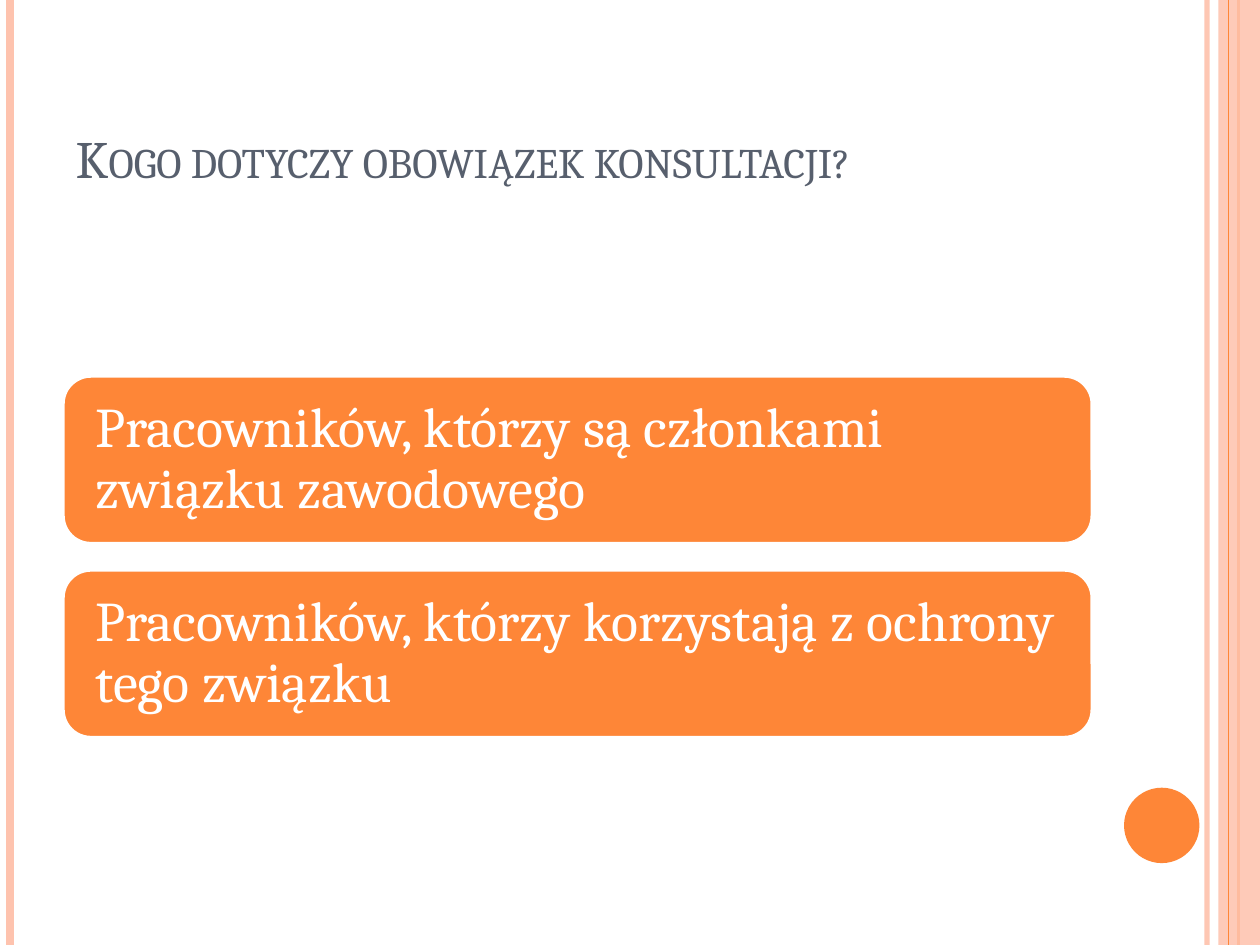
"""Build the slide on which employees the duty of consultation covers."""
from lxml.etree import SubElement
from pptx import Presentation
from pptx.dml.color import RGBColor
from pptx.enum.shapes import MSO_CONNECTOR, MSO_SHAPE
from pptx.enum.text import MSO_ANCHOR, MSO_AUTO_SIZE, PP_ALIGN
from pptx.oxml.ns import qn
from pptx.util import Cm, Pt

TITLE = "Kogo dotyczy obowiązek konsultacji?"
GROUPS = [
    "Pracowników, którzy są członkami związku zawodowego",
    "Pracowników, którzy korzystają z ochrony tego związku",
]
THEME = {
    "font": "Cambria",
    "orange": RGBColor(0xFE, 0x86, 0x37),
    "peach": RGBColor(0xFE, 0xC3, 0xAE),
    "slate": RGBColor(0x57, 0x5F, 0x6D),
    "white": RGBColor(0xFF, 0xFF, 0xFF),
    "title_size": Pt(30),
    "group_size": Pt(32),
}
WIDTH, HEIGHT = 25.4, 19.05
LEFT, CONTENT_WIDTH = 1.27, 20.75
GROUP_TOP, GROUP_HEIGHT, GROUP_GAP = 7.58, 3.38, 0.53
STRIPES_BELOW = [(24.33, "peach", 3, 93), (0.2, "peach", 4.5, 100), (24.97, "orange", 1.5, 100)]
BAND_LEFT, BAND_OPACITY = 24.56, 87
STRIPES_ABOVE = [(24.77, "orange", 0.75, 100)]
DOT = (22.66, 15.88, 1.52, 1.52)


def set_opacity(element, percent):
    color = next(element.iter(qn("a:srgbClr")))
    SubElement(color, qn("a:alpha"), val=str(percent * 1000))


def add_stripe(slide, x, color, weight, opacity):
    stripe = slide.shapes.add_connector(MSO_CONNECTOR.STRAIGHT, Cm(x), Cm(0), Cm(x), Cm(HEIGHT))
    stripe.line.color.rgb = THEME[color]
    stripe.line.width = Pt(weight)
    properties = stripe.line._get_or_add_ln()
    if opacity < 100:
        set_opacity(properties, opacity)
    SubElement(properties.getparent(), qn("a:effectLst"))


def add_filled(slide, kind, place, color):
    filled = slide.shapes.add_shape(kind, *map(Cm, place))
    filled.shadow.inherit = False
    filled.fill.solid()
    filled.fill.fore_color.rgb = THEME[color]
    filled.line.fill.background()
    return filled


def write(frame, text, anchor, size, color):
    formats = {"word_wrap": True, "auto_size": MSO_AUTO_SIZE.NONE, "vertical_anchor": anchor}
    for name, value in formats.items():
        setattr(frame, name, value)
    paragraph = frame.paragraphs[0]
    paragraph.alignment = PP_ALIGN.LEFT
    run = paragraph.add_run()
    run.text = text
    for name, value in {"name": THEME["font"], "size": THEME[size]}.items():
        setattr(run.font, name, value)
    run.font.color.rgb = THEME[color]
    return paragraph


def add_decoration(slide):
    for stripe in STRIPES_BELOW:
        add_stripe(slide, *stripe)
    band_place = (BAND_LEFT, 0, WIDTH - BAND_LEFT, HEIGHT)
    band = add_filled(slide, MSO_SHAPE.RECTANGLE, band_place, "peach")
    set_opacity(band.fill._xPr, BAND_OPACITY)
    for stripe in STRIPES_ABOVE:
        add_stripe(slide, *stripe)
    add_filled(slide, MSO_SHAPE.OVAL, DOT, "orange")


def add_title(slide):
    title = slide.shapes.title
    place = {"left": LEFT, "top": 0.76, "width": CONTENT_WIDTH, "height": 3.18}
    for name, value in place.items():
        setattr(title, name, Cm(value))
    heading = write(title.text_frame, TITLE, MSO_ANCHOR.BOTTOM, "title_size", "slate")
    heading.runs[0].font._element.set("cap", "small")


def add_groups(slide):
    for index, text in enumerate(GROUPS):
        top = GROUP_TOP + index * (GROUP_HEIGHT + GROUP_GAP)
        place = (LEFT, top, CONTENT_WIDTH, GROUP_HEIGHT)
        group = add_filled(slide, MSO_SHAPE.ROUNDED_RECTANGLE, place, "orange")
        group.line.color.rgb = THEME["white"]
        group.line.width = Pt(2)
        frame = group.text_frame
        for side in ("left", "top", "right", "bottom"):
            setattr(frame, f"margin_{side}", Cm(0.49))
        paragraph = write(frame, text, MSO_ANCHOR.MIDDLE, "group_size", "white")
        paragraph.line_spacing = 0.9


def main():
    deck = Presentation()
    deck.slide_width, deck.slide_height = Cm(WIDTH), Cm(HEIGHT)
    slide = deck.slides.add_slide(deck.slide_layouts[5])
    add_decoration(slide)
    add_title(slide)
    add_groups(slide)
    deck.save("out.pptx")


if __name__ == "__main__":
    main()
